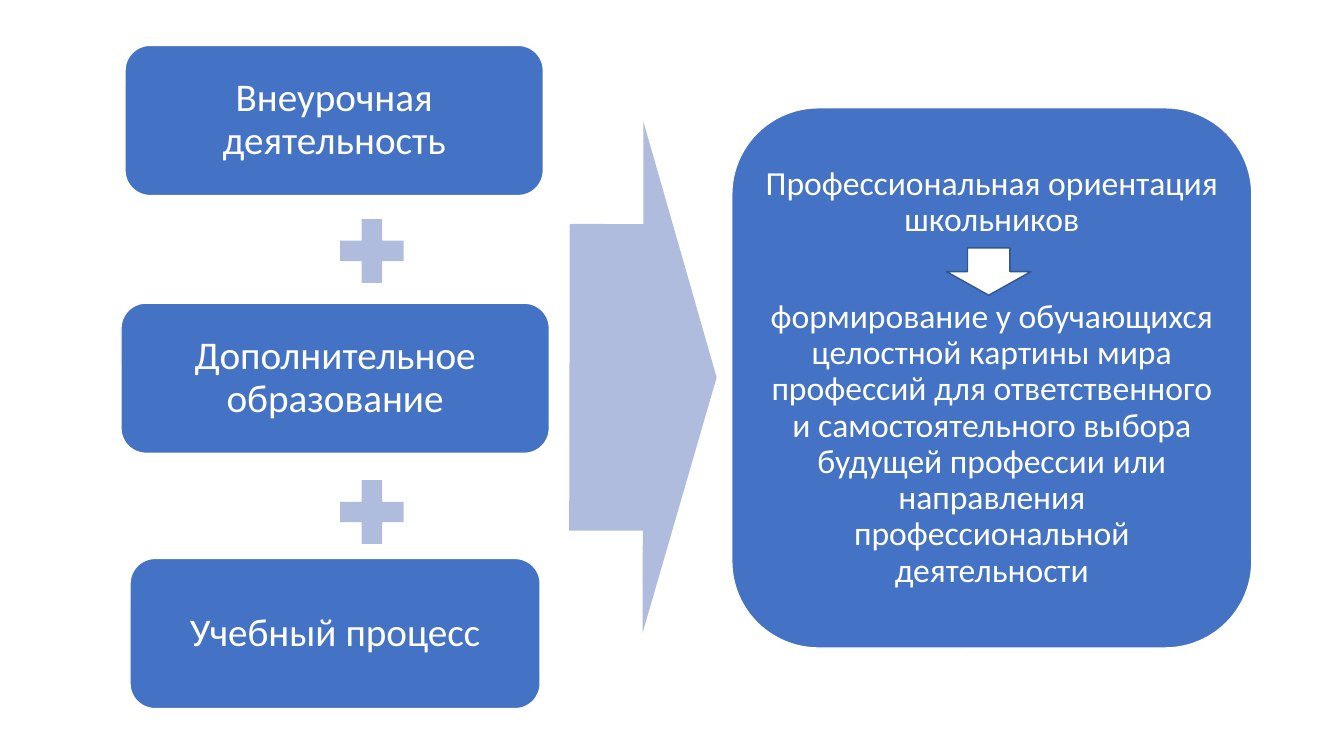
from pptx import Presentation
from pptx.dml.color import RGBColor
from pptx.enum.shapes import MSO_SHAPE as SHAPE
from pptx.enum.text import MSO_ANCHOR, PP_ALIGN
from pptx.util import Pt

COLORS = {"box": "4472C4", "sign": "B0BCDE", "white": "FFFFFF", "outline": "325491"}
BOX_HEIGHT = 107.3
PLUS_LEFT, PLUS_SIZE = 234.7, 61.9

# text, left, top, width
SOURCES = [
    ("Внеурочная деятельность", 89.3, 32.4, 298.8),
    ("Дополнительное образование", 86.4, 216.5, 306),
    ("Учебный процесс", 92.9, 398.9, 293),
]
PLUS_TOPS = [148.3, 334.8]
RESULT = [
    "Профессиональная ориентация школьников",
    "формирование у обучающихся целостной картины мира профессий для "
    "ответственного и самостоятельного выбора будущей профессии или "
    "направления профессиональной деятельности",
]


def color(name):
    return RGBColor.from_string(COLORS[name])


def add_figure(slide, kind, box, fill, line=None):
    sp = slide.shapes.add_shape(kind, *(Pt(v) for v in box))
    sp.shadow.inherit = False
    sp.fill.solid()
    sp.fill.fore_color.rgb = color(fill)
    if line:
        sp.line.color.rgb = color(line)
        sp.line.width = Pt(1)
    else:
        sp.line.fill.background()
    return sp


def add_text_box(slide, box, texts, size, inset, gap=0):
    """Rounded box with centred paragraphs, gap points apart."""
    sp = add_figure(slide, SHAPE.ROUNDED_RECTANGLE, box, "box", "white")
    tf = sp.text_frame
    frame_format = {"word_wrap": True, "vertical_anchor": MSO_ANCHOR.MIDDLE}
    for side in ("left", "top", "right", "bottom"):
        frame_format[f"margin_{side}"] = Pt(inset)
    for name, value in frame_format.items():
        setattr(tf, name, value)
    for i, text in enumerate(texts):
        p = tf.paragraphs[0] if i == 0 else tf.add_paragraph()
        p.alignment = PP_ALIGN.CENTER
        p.line_spacing = 0.9
        if i:
            p.space_before = Pt(gap)
        r = p.add_run()
        r.text = text
        for name, value in {"name": "Calibri", "size": Pt(size)}.items():
            setattr(r.font, name, value)
        r.font.color.rgb = color("white")


def main():
    prs = Presentation()
    prs.slide_width, prs.slide_height = Pt(960), Pt(540)
    s = prs.slides.add_slide(prs.slide_layouts[6])

    for text, left, top, width in SOURCES:
        add_text_box(s, (left, top, width, BOX_HEIGHT), [text], 28, 3)
    for top in PLUS_TOPS:
        add_figure(s, SHAPE.MATH_PLUS, (PLUS_LEFT, top, PLUS_SIZE, PLUS_SIZE), "sign")

    arrow = add_figure(s, SHAPE.RIGHT_ARROW, (406.8, 87.1, 105.1, 365), "sign")
    arrow.adjustments[0] = 0.6
    arrow.rotation = 0.1

    add_text_box(s, (522.7, 77, 371.5, 385.9), RESULT, 24, 2, gap=43)
    add_figure(s, SHAPE.DOWN_ARROW, (676, 177.1, 60.5, 33.8), "white", "outline")

    prs.save("out.pptx")


if __name__ == "__main__":
    main()
